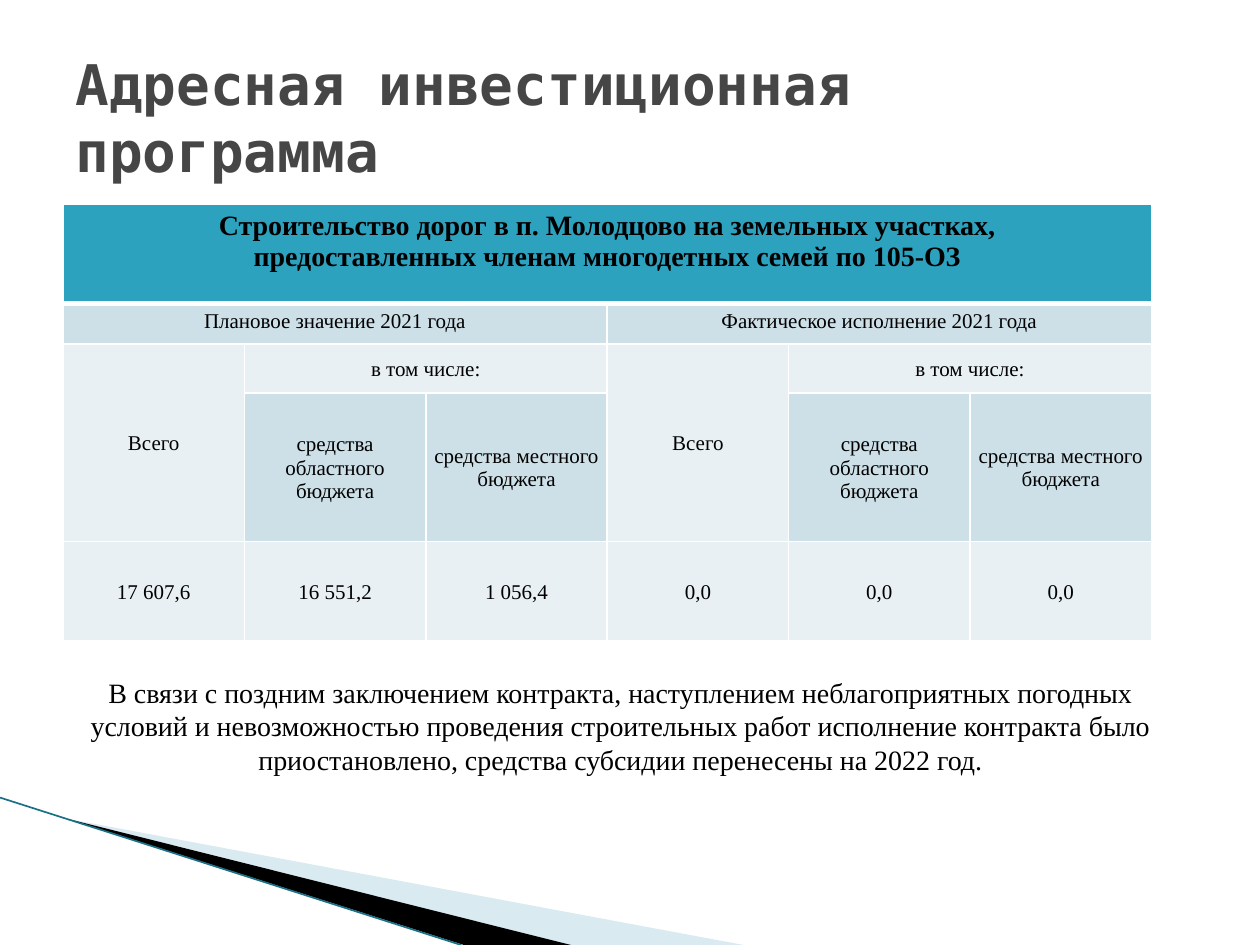
from lxml import etree
from pptx import Presentation
from pptx.dml.color import RGBColor
from pptx.enum.shapes import MSO_CONNECTOR
from pptx.enum.text import MSO_ANCHOR, PP_ALIGN
from pptx.oxml.ns import qn
from pptx.util import Inches, Pt

SERIF = "Times New Roman"
HEADER, DARK_BAND, LIGHT_BAND = "2DA2BF", "CDE0E8", "E8F0F4"
ROW_HEIGHTS = [0.79, 0.32, 0.39, 1.18, 0.79]
COLUMN_WIDTH = 1.44
TOTAL, INCLUDING = "Всего", "в том числе:"
REGIONAL, LOCAL = "средства областного бюджета", "средства местного бюджета"
VALUES = ["17 607,6", "16 551,2", "1 056,4", "0,0", "0,0", "0,0"]


def color(value):
    return RGBColor.from_string(value)


def add_paragraph(frame, text, size, font=SERIF, fill="000000", bold=False,
                  align=PP_ALIGN.CENTER, first=True):
    paragraph = frame.paragraphs[0] if first else frame.add_paragraph()
    paragraph.alignment = align
    run = paragraph.add_run()
    run.text = text
    run.font.size = Pt(size)
    run.font.name = font
    run.font.bold = bold
    run.font.color.rgb = color(fill)


def add_text_box(slide, left, top, width, height, anchor, text, size, **style):
    box = slide.shapes.add_textbox(Inches(left), Inches(top), Inches(width), Inches(height))
    frame = box.text_frame
    frame.word_wrap = True
    frame.vertical_anchor = anchor
    add_paragraph(frame, text, size, **style)


def add_wedge(slide, points, fill, opacity=100):
    corners = [(Inches(x), Inches(y)) for x, y in points]
    builder = slide.shapes.build_freeform(*corners[0])
    builder.add_line_segments(corners[1:], close=True)
    shape = builder.convert_to_shape()
    shape.shadow.inherit = False
    shape.line.fill.background()
    shape.fill.solid()
    shape.fill.fore_color.rgb = color(fill)
    if opacity < 100:
        fill_color = shape.fill._xPr.find(qn("a:solidFill"))[0]
        etree.SubElement(fill_color, qn("a:alpha"), val=str(opacity * 1000))


def add_corner_decoration(slide, left, top, bottom):
    """Draw the two wedges and the line that run down to the bottom edge."""
    tip = (left + 0.54, top + 0.17)
    add_wedge(slide, [tip, (left + 5.9, bottom), (left + 4.53, bottom)], "A0CBDC", 40)
    add_wedge(slide, [tip, (left + 4.53, bottom), (left + 3.68, bottom)], "000000")
    line = slide.shapes.add_connector(
        MSO_CONNECTOR.STRAIGHT, Inches(left), Inches(top), Inches(left + 3.66), Inches(bottom))
    line.line.color.rgb = color("1B7086")
    line.line.width = Pt(0.95)
    etree.SubElement(line._element.spPr, qn("a:effectLst"))


def set_borders(cell, bottom_width):
    properties = cell._tc.get_or_add_tcPr()
    for side, width in (("L", 1), ("R", 1), ("T", 1), ("B", bottom_width)):
        border = etree.SubElement(properties, qn(f"a:ln{side}"), w=str(Pt(width)))
        fill = etree.SubElement(border, qn("a:solidFill"))
        etree.SubElement(fill, qn("a:srgbClr"), val="FFFFFF")


def fill_cell(table, row, column, lines, size=12, bold=False, row_span=1, column_span=1):
    cell = table.cell(row, column)
    if row_span > 1 or column_span > 1:
        cell.merge(table.cell(row + row_span - 1, column + column_span - 1))
    if row >= 2:
        cell.vertical_anchor = MSO_ANCHOR.MIDDLE
        cell.margin_left = cell.margin_right = cell.margin_top = Inches(0.01)
        cell.margin_bottom = 0
    for index, line in enumerate(lines):
        add_paragraph(cell.text_frame, line, size, bold=bold, first=index == 0)


def add_budget_table(slide, left, top):
    columns = len(VALUES)
    table = slide.shapes.add_table(
        len(ROW_HEIGHTS), columns, Inches(left), Inches(top),
        Inches(COLUMN_WIDTH * columns), Inches(sum(ROW_HEIGHTS))).table
    for column in table.columns:
        column.width = Inches(COLUMN_WIDTH)
    bands = [HEADER, DARK_BAND, LIGHT_BAND, DARK_BAND, LIGHT_BAND]
    for index, (height, band) in enumerate(zip(ROW_HEIGHTS, bands)):
        table.rows[index].height = Inches(height)
        for cell in table.rows[index].cells:
            set_borders(cell, 3 if index == 0 else 1)
            cell.fill.solid()
            cell.fill.fore_color.rgb = color(band)

    fill_cell(table, 0, 0, ["Строительство дорог в п. Молодцово на земельных участках,",
                            "предоставленных членам многодетных семей по 105-ОЗ"],
              size=16, bold=True, column_span=columns)
    groups = ["Плановое значение 2021 года", "Фактическое исполнение 2021 года"]
    for start, group in zip((0, 3), groups):
        fill_cell(table, 1, start, [group], column_span=3)
        fill_cell(table, 2, start, [TOTAL], row_span=2)
        fill_cell(table, 2, start + 1, [INCLUDING], column_span=2)
        fill_cell(table, 3, start + 1, [REGIONAL])
        fill_cell(table, 3, start + 2, [LOCAL])
    for column, value in enumerate(VALUES):
        fill_cell(table, 4, column, [value])


def main():
    presentation = Presentation()
    presentation.slide_width = Inches(10)
    presentation.slide_height = Inches(7.5)
    slide = presentation.slides.add_slide(presentation.slide_layouts[6])
    add_corner_decoration(slide, 0, 6.33, 7.5)
    add_budget_table(slide, 0.5, 1.62)
    add_text_box(slide, 0.5, 0.3, 9, 1.25, MSO_ANCHOR.MIDDLE,
                 "Адресная инвестиционная программа", 32, font="DejaVu Sans Mono",
                 fill="464646", bold=True, align=PP_ALIGN.LEFT)
    add_text_box(slide, 0.47, 5.31, 8.91, 0.91, MSO_ANCHOR.TOP,
                 "В связи с поздним заключением контракта, наступлением неблагоприятных "
                 "погодных условий и невозможностью проведения строительных работ исполнение "
                 "контракта было приостановлено, средства субсидии перенесены на 2022 год.", 16)
    presentation.save("out.pptx")


if __name__ == "__main__":
    main()
